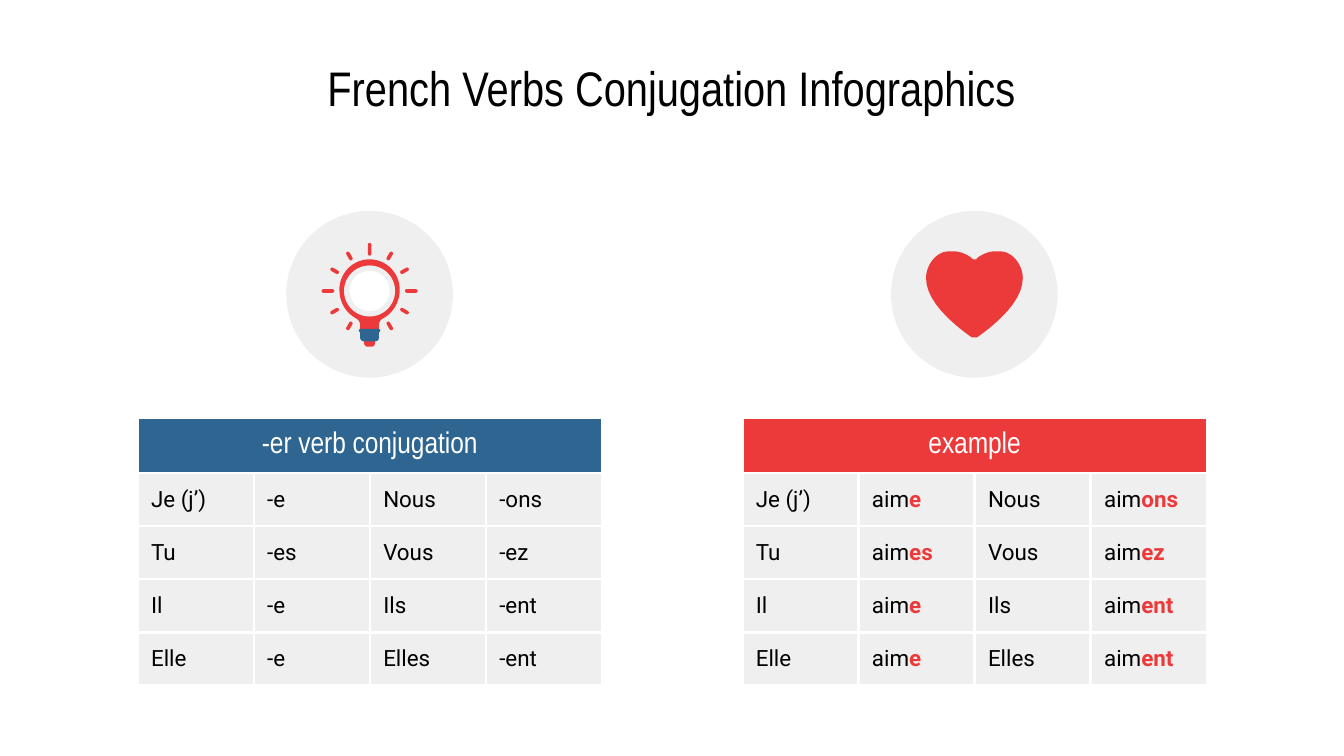
from pptx import Presentation
from pptx import util as u
from pptx.dml.color import RGBColor
from pptx.enum import shapes, text
from pptx.oxml import parse_xml
from pptx.oxml.ns import nsdecls
from math import cos, radians, sin

RED = RGBColor(0xEC, 0x3A, 0x3B)
BLUE = RGBColor(0x2F, 0x66, 0x91)
GRAY = RGBColor(0xEF, 0xEF, 0xEF)
WHITE = RGBColor(0xFF, 0xFF, 0xFF)
BLACK = RGBColor(0, 0, 0)
KIND = shapes.MSO_SHAPE

ENDS = [("Je (j’)", "e", "Nous", "ons"), ("Tu", "es", "Vous", "ez"),
        ("Il", "e", "Ils", "ent"), ("Elle", "e", "Elles", "ent")]
HEART = [(72.5, 19.3), (72.4, 19.3), (72.3, 19.3), (72.3, 19.2),
         (71.9, 18.9), (71.4, 18.7), (70.9, 18.7),
         (70.6, 18.7), (70.4, 18.7), (70.1, 18.8),
         (69.4, 19.1), (68.9, 19.9), (68.9, 20.7),
         (68.9, 22.7), (71.6, 24.6), (72.3, 25.1),
         (72.4, 25.1), (72.4, 25.1), (72.5, 25.1)]
BULB = [(27.5, 19.3), (26.4, 19.3), (25.5, 20.1), (25.3, 21.1),
        (25.1, 22.2), (25.6, 23.2), (26.5, 23.7),
        (26.7, 23.8), (26.8, 24), (26.8, 24.2),
        (26.8, 24.5), (26.8, 24.8), (26.8, 25)]


class Deck:
    """Draws styled elements on one slide, on a grid of 100 columns by 56.25 rows."""
    head, body = "Arial Narrow", "Roboto"

    def __init__(self):
        self.show = Presentation()
        self.show.slide_width, self.show.slide_height = self.unit(100), self.unit(56.25)
        self.slide = self.show.slides.add_slide(self.show.slide_layouts[5])
        self.home = self.slide.shapes

    def unit(self, cells):
        return u.Inches(cells / 10)

    def style(self, run, size, face, color, bold=False):
        font = run.font
        font.size, font.name, font.bold = u.Pt(size), face, bold
        font.color.rgb = color

    def inset(self, box, pad=1):
        box.margin_left = box.margin_right = self.unit(pad)
        box.margin_top = box.margin_bottom = self.unit(pad)

    def paint(self, shape, color):
        shape.shadow.inherit = False
        shape.fill.solid()
        shape.fill.fore_color.rgb = color
        shape.line.fill.background()

    def title(self, words, x, y, w, h):
        box = self.slide.shapes.title
        box.left, box.top, box.width, box.height = map(self.unit, (x, y, w, h))
        frame = box.text_frame
        frame.text = words
        frame.word_wrap, frame.auto_size = True, text.MSO_AUTO_SIZE.NONE
        frame.vertical_anchor = text.MSO_ANCHOR.BOTTOM
        self.inset(frame)
        frame.paragraphs[0].alignment = text.PP_ALIGN.CENTER
        self.style(frame.paragraphs[0].runs[0], 26, self.head, BLACK)

    def shape(self, kind, x, y, w, h, color, turn=0, curve=None):
        part = self.home.add_shape(kind, *map(self.unit, (x - w / 2, y - h / 2, w, h)))
        part.rotation = turn
        if curve is not None:
            part.adjustments[0] = curve
        self.paint(part, color)

    def disc(self, x, y, size, color):
        self.shape(KIND.OVAL, x, y, size, size, color)

    def pill(self, x, y, w, h, color, turn=0, curve=0.5):
        self.shape(KIND.ROUNDED_RECTANGLE, x, y, w, h, color, turn, curve)

    def mirror(self, half, color, steps=12):
        axis, side = half[0][0], half[:1]
        for i in range(0, len(half) - 1, 3):
            for n in range(1, steps + 1):
                t = n / steps
                mix = ((1 - t) ** 3, 3 * t * (1 - t) ** 2, 3 * t * t * (1 - t), t ** 3)
                side.append(tuple(sum(m * p[k] for m, p in zip(mix, half[i:i + 4]))
                                  for k in (0, 1)))
        ring = side + [(2 * axis - x, y) for x, y in reversed(side)]
        dots = [(self.unit(x), self.unit(y)) for x, y in ring]
        pen = self.home.build_freeform(*dots[0])
        pen.add_line_segments(dots[1:], close=True)
        self.paint(pen.convert_to_shape(), color)

    def rays(self, x, y):
        for turn in range(0, 360, 30):
            if turn == 180:
                continue
            far, long = (3.1, 0.95) if turn % 90 == 0 else (3, 0.7)
            way = radians(turn)
            self.pill(x + far * sin(way), y - far * cos(way), 0.27, long, RED, turn)

    def cell(self, cell, fill):
        self.inset(cell)
        for side in ("lnL", "lnR", "lnT", "lnB"):
            cell._tc.get_or_add_tcPr().append(parse_xml(
                f'<a:{side} {nsdecls("a")} w="{u.Pt(1.5)}"><a:solidFill>'
                f'<a:srgbClr val="{WHITE}"/></a:solidFill></a:{side}>'))
        cell.fill.solid()
        cell.fill.fore_color.rgb = fill

    def table(self, x, y, name, color, stem, bold):
        rows, cols = len(ENDS) + 1, len(ENDS[0])
        grid = self.home.add_table(rows, cols, *map(
            self.unit, (x, y, 8.64 * cols, 3.9 * rows))).table
        grid.first_row = grid.horz_banding = False
        for r in range(rows):
            for c in range(cols):
                self.cell(grid.cell(r, c), GRAY if r else color)
        top = grid.cell(0, 0)
        for c in range(1, cols):
            self.inset(grid.cell(0, c), 0)
        top.merge(grid.cell(0, cols - 1))
        top.text_frame.text = name
        line = top.text_frame.paragraphs[0]
        line.alignment = text.PP_ALIGN.CENTER
        self.style(line.runs[0], 16, self.head, WHITE)
        for r, row in enumerate(ENDS, 1):
            for c, word in enumerate(row):
                line = grid.cell(r, c).text_frame.paragraphs[0]
                split = bold and c % 2
                line.text = stem if split else (stem + word if c % 2 else word)
                self.style(line.runs[0], 12, self.body, BLACK)
                if split:
                    tail = line.add_run()
                    tail.text = word
                    self.style(tail, 12, self.body, RED, True)

    def bulb(self, x, y):
        self.home = self.slide.shapes.add_group_shape().shapes
        self.mirror(BULB, RED)
        for size, color in ((3.8, GRAY), (3, WHITE)):
            self.disc(x, y, size, color)
        self.pill(x, 25.3, 0.8, 1, RED, curve=0.3)
        self.rays(x, y)
        self.pill(x, 24.95, 1.4, 0.9, BLUE, curve=0.3)
        self.pill(x, 24.6, 1.6, 0.25, BLUE)
        self.home = self.slide.shapes


def main():
    deck = Deck()
    deck.title("French Verbs Conjugation Infographics", 5, 4.55, 90, 5.1)
    for x in (27.5, 72.5):
        deck.disc(x, 21.9, 12.4, GRAY)
    deck.mirror(HEART, RED)
    deck.bulb(27.5, 21.65)
    for x, style in ((10.24, ("-er verb conjugation", BLUE, "-", False)),
                     (55.24, ("example", RED, "aim", True))):
        deck.table(x, 31.1, *style)
    deck.show.save("out.pptx")


if __name__ == "__main__":
    main()
